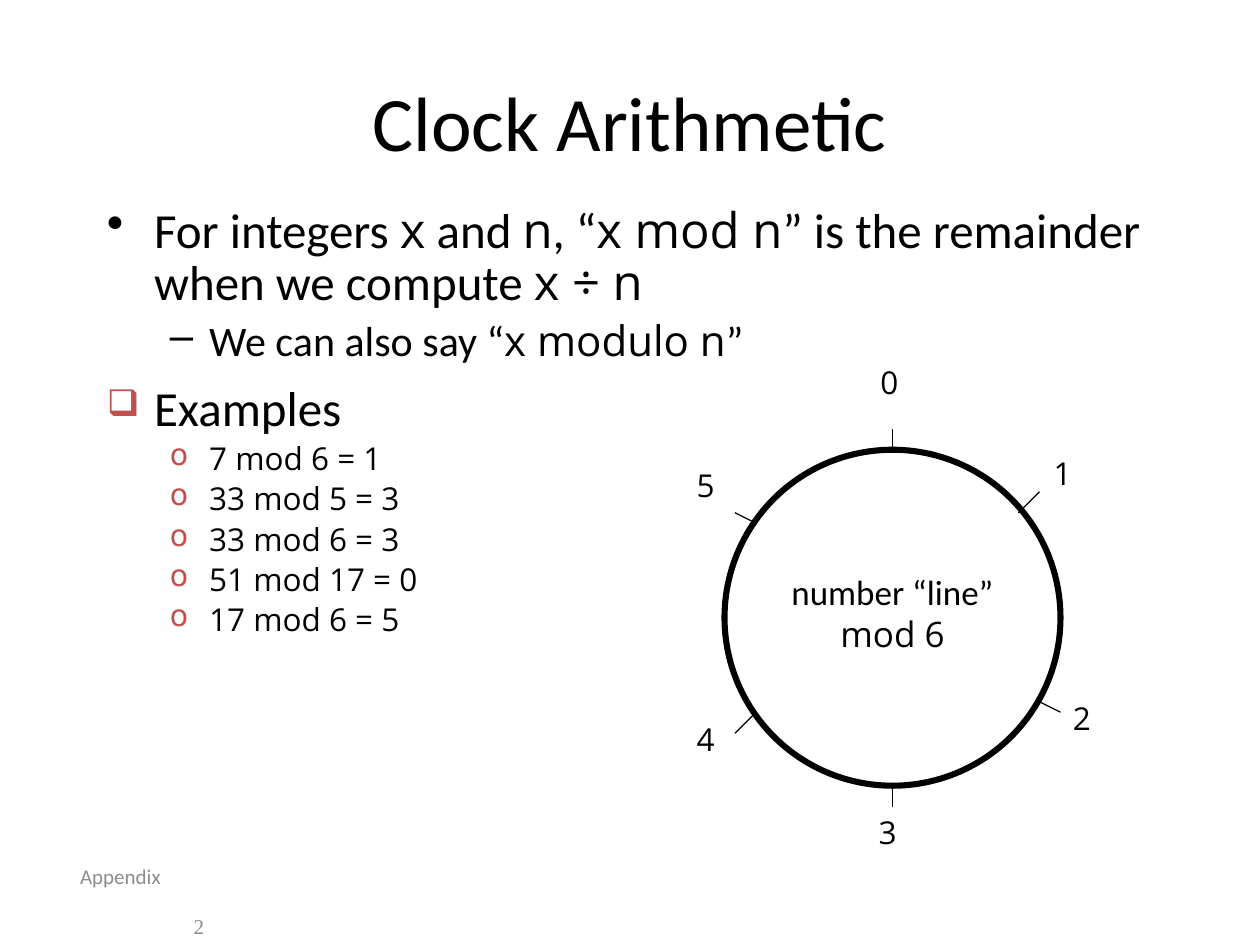
from lxml.etree import SubElement
from pptx import Presentation
from pptx.dml.color import RGBColor
from pptx.enum.shapes import MSO_CONNECTOR, MSO_SHAPE
from pptx.enum.text import MSO_ANCHOR, PP_ALIGN
from pptx.oxml.ns import qn
from pptx.util import Pt

BLACK = RGBColor(0x00, 0x00, 0x00)
GRAY = RGBColor(0x8C, 0x8C, 0x8C)
RED = RGBColor(0xC0, 0x50, 0x4D)
BODY, MATH, SERIF = "Calibri", "Open Sans", "Times New Roman"

# Number, label offset, tick start and tick end, measured from the circle's corner
HOURS = [
    ("0", (82, -53), (96, 0), (96, -12)),
    ("1", (181, -1), (168, 36), (180, 24)),
    ("2", (192, 139), (180, 144), (192, 150)),
    ("3", (81, 204), (96, 192), (96, 204)),
    ("4", (-23, 151), (18, 150), (6, 162)),
    ("5", (-23, 6), (18, 42), (6, 36)),
]
EXAMPLES = ["7 mod 6 = 1", "33 mod 5 = 3", "33 mod 6 = 3",
            "51 mod 17 = 0", "17 mod 6 = 5"]


def add_box(slide, box, anchor=MSO_ANCHOR.TOP):
    tf = slide.shapes.add_textbox(*map(Pt, box)).text_frame
    tf.word_wrap = True
    tf.vertical_anchor = anchor
    return tf


def add_text(tf, *texts, fonts=(BODY,), size=18, color=BLACK,
             align=PP_ALIGN.LEFT, margin=0, before=0):
    """Add a paragraph whose runs take the given fonts in turn."""
    p = tf.paragraphs[0]
    if p.runs:
        p = tf.add_paragraph()
    p.alignment = align
    if before:
        p.space_before = Pt(before)
    if margin:
        p._p.get_or_add_pPr().set("marL", str(Pt(margin)))
    for i, text in enumerate(texts):
        r = p.add_run()
        r.text = text
        r.font.name = fonts[i % len(fonts)]
        r.font.size = Pt(size)
        r.font.color.rgb = color
    return p


def add_bullet(p, char, level=0, color=None, percent=100):
    p.level = level
    p.line_spacing = 0.9
    margin, hang = ((27, 27), (58.5, 22.5))[level]
    pPr = p._p.get_or_add_pPr()
    pPr.set("marL", str(Pt(margin)))
    pPr.set("indent", str(-Pt(hang)))
    before = SubElement(pPr, qn("a:spcBef"))
    SubElement(before, qn("a:spcPct"), val="20000")
    if color is not None:
        clr = SubElement(pPr, qn("a:buClr"))
        SubElement(clr, qn("a:srgbClr"), val=str(color))
    SubElement(pPr, qn("a:buSzPct"), val=str(percent * 1000))
    SubElement(pPr, qn("a:buChar"), char=char)


def add_title(slide, box):
    tf = add_box(slide, box, MSO_ANCHOR.MIDDLE)
    add_text(tf, "Clock Arithmetic", size=44, align=PP_ALIGN.CENTER)


def add_definition(slide, box):
    tf = add_box(slide, box)
    p = add_text(tf, "For integers ", "x", " and ", "n", ", “", "x mod n",
                 "” is the remainder when we compute ", "x ÷ n",
                 fonts=(BODY, MATH), size=28)
    add_bullet(p, "•")
    p = add_text(tf, "We can also say “", "x modulo n", "”",
                 fonts=(BODY, MATH), size=24)
    add_bullet(p, "–", level=1)


def add_examples(slide, box):
    tf = add_box(slide, box)
    add_bullet(add_text(tf, "Examples", size=28), "❑", color=RED, percent=75)
    for example in EXAMPLES:
        p = add_text(tf, example, fonts=(MATH,))
        add_bullet(p, "o", level=1, color=RED, percent=95)


def add_clock(slide, box):
    left, top, width, height = box
    # Circle
    sp = slide.shapes.add_shape(MSO_SHAPE.OVAL, *map(Pt, box))
    sp.shadow.inherit = False
    sp.fill.background()
    sp.line.color.rgb = BLACK
    sp.line.width = Pt(3.5)
    # Numbers and ticks
    for number, (dx, dy), (x1, y1), (x2, y2) in HOURS:
        tf = add_box(slide, (left + dx, top + dy, 29.5, 36))
        add_text(tf, number, fonts=(MATH,))
        tick = slide.shapes.add_connector(
            MSO_CONNECTOR.STRAIGHT, Pt(left + x1), Pt(top + y1),
            Pt(left + x2), Pt(top + y2))
        tick.line.color.rgb = BLACK
        tick.line.width = Pt(0.75)
        SubElement(tick._element.spPr, qn("a:effectLst"))
    # Caption in the middle
    tf = add_box(slide, (left + 26, top + 65.5, width - 52, 55.5))
    add_text(tf, "number “line”", size=20, align=PP_ALIGN.CENTER)
    add_text(tf, "mod 6", fonts=(MATH,), size=20, align=PP_ALIGN.CENTER)


def add_footer(slide, box):
    tf = add_box(slide, box, MSO_ANCHOR.MIDDLE)
    add_text(tf, "Appendix", size=12, color=GRAY, margin=2.7)
    add_text(tf, "2", fonts=(SERIF,), size=12, color=GRAY,
             margin=67.5, before=14.4)


def main():
    prs = Presentation()
    prs.slide_width, prs.slide_height = Pt(720), Pt(540)
    slide = prs.slides.add_slide(prs.slide_layouts[6])
    add_footer(slide, (36, 490, 168, 50))
    add_title(slide, (54, 24, 612, 90))
    add_definition(slide, (54, 114, 612, 102))
    add_examples(slide, (54, 216, 282, 252))
    add_clock(slide, (414, 257, 192, 192))
    prs.save("out.pptx")


if __name__ == "__main__":
    main()
